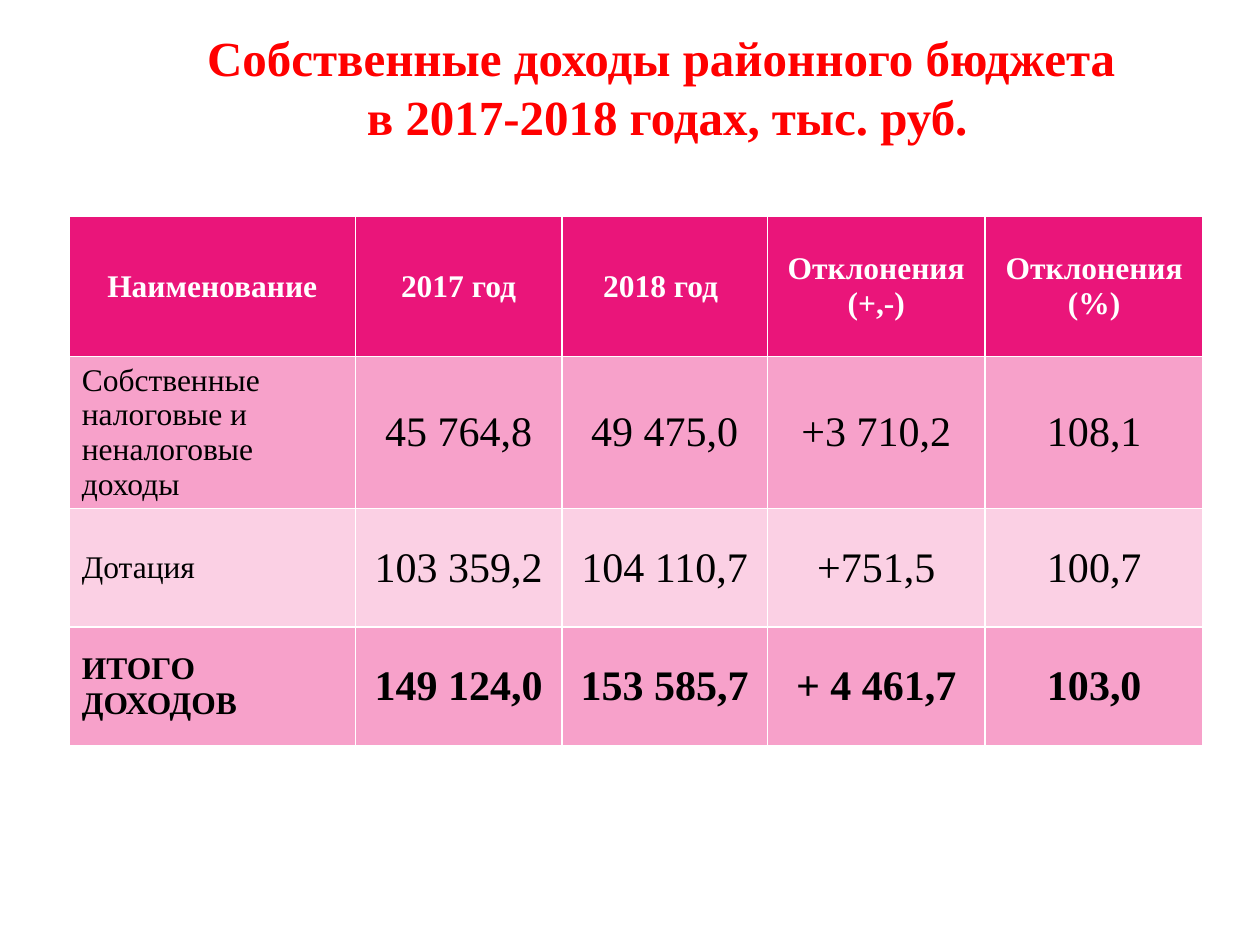
from lxml import etree
from pptx import Presentation
from pptx.dml.color import RGBColor
from pptx.enum import text
from pptx.oxml import ns
from pptx.util import Inches, Pt

FONT = "Times New Roman"
RED = RGBColor(0xFF, 0x00, 0x00)
WHITE = RGBColor(0xFF, 0xFF, 0xFF)
BLACK = RGBColor(0x00, 0x00, 0x00)
PINK = RGBColor(0xEA, 0x15, 0x7A)
ROSE = RGBColor(0xF7, 0xA1, 0xCA)
PALE = RGBColor(0xFB, 0xD0, 0xE4)


def style(para, size, color, bold, align):
    para.alignment = align
    font = para.font
    font.name, font.size, font.bold = FONT, Pt(size), bold
    font.color.rgb = color


deck = Presentation()
deck.slide_width, deck.slide_height = Inches(10), Inches(7.5)
slide = deck.slides.add_slide(deck.slide_layouts[5])
MID, LEFT = text.PP_ALIGN.CENTER, text.PP_ALIGN.LEFT

# Title with a soft text shadow
title = slide.shapes.title
title.left, title.top = Inches(1.09), Inches(0.3)
title.width, title.height = Inches(8.41), Inches(0.77)
frame = title.text_frame
frame.text = "Собственные доходы районного бюджета \vв 2017-2018 годах, тыс. руб."
frame.auto_size = text.MSO_AUTO_SIZE.NONE
frame.vertical_anchor = text.MSO_ANCHOR.MIDDLE
style(frame.paragraphs[0], 28, RED, True, MID)
for run in frame.paragraphs[0].runs:
    run.font._element.append(etree.fromstring(
        f'<a:effectLst xmlns:a="{ns.nsuri("a")}">'
        '<a:outerShdw blurRad="38100" dist="38100" dir="5400000">'
        '<a:srgbClr val="000000"><a:alpha val="45000"/></a:srgbClr>'
        '</a:outerShdw></a:effectLst>'))

# Income table
rows = [
    ["Наименование", "2017 год", "2018 год ", "Отклонения (+,-)", "Отклонения (%)"],
    ["Собственные налоговые и неналоговые доходы",
     "45 764,8", "49 475,0", "+3 710,2", "108,1"],
    ["Дотация", "103 359,2", "104 110,7", "+751,5", "100,7"],
    ["ИТОГО ДОХОДОВ", "149 124,0", "153 585,7", "+ 4 461,7", "103,0"],
]
widths = [2.27, 1.64, 1.63, 1.73, 1.73]
heights = [1.11, 0.94, 0.94, 0.94]
fills = [PINK, ROSE, PALE, ROSE]
table = slide.shapes.add_table(
    len(rows), len(widths), Inches(0.55), Inches(1.72),
    Inches(sum(widths)), Inches(sum(heights))).table
for col, width in zip(table.columns, widths):
    col.width = Inches(width)
for r, row in enumerate(rows):
    table.rows[r].height = Inches(heights[r])
    head = r == 0
    for c, words in enumerate(row):
        cell = table.cell(r, c)
        cell.text = words
        cell.vertical_anchor = text.MSO_ANCHOR.MIDDLE
        cell.fill.solid()
        cell.fill.fore_color.rgb = fills[r]
        style(cell.text_frame.paragraphs[0],
              18 if head or c == 0 else 24,
              WHITE if head else BLACK,
              r in (0, len(rows) - 1),
              MID if head or c else LEFT)

deck.save("out.pptx")
